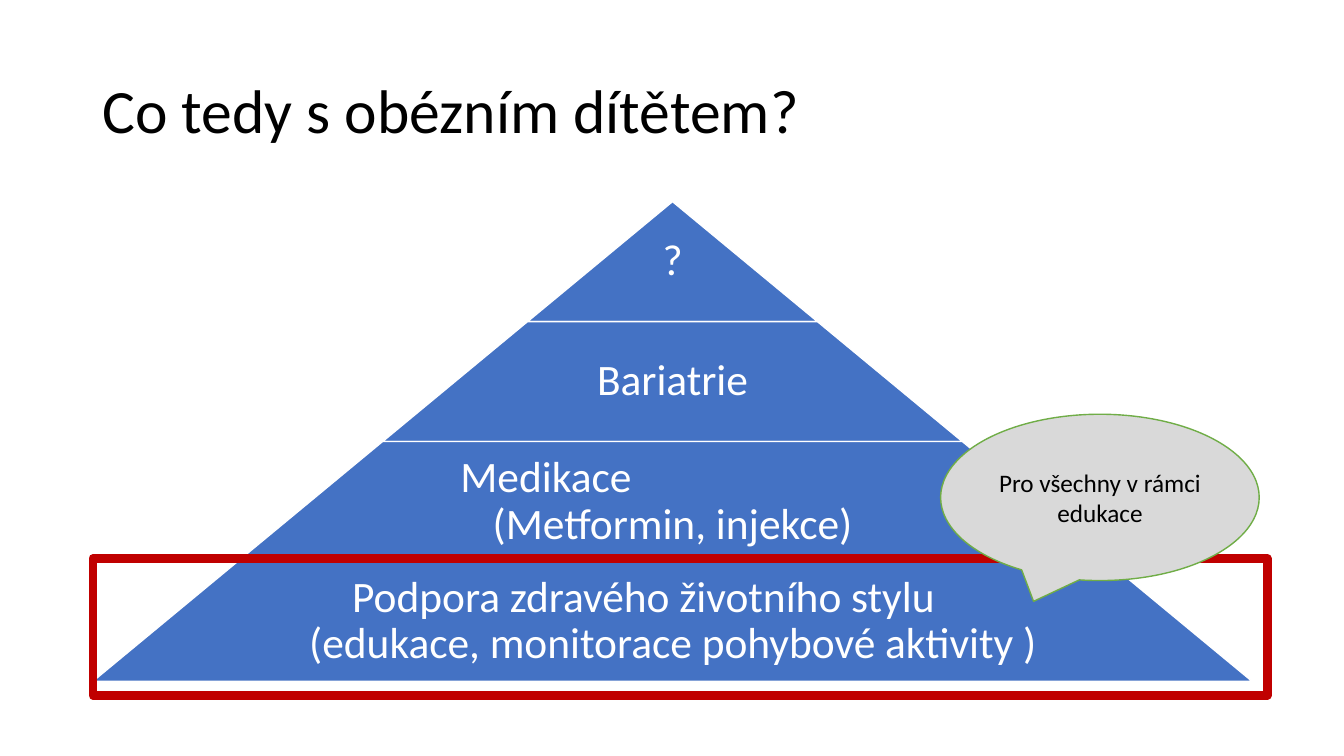
from pptx import Presentation
from pptx import util as u
from pptx.dml.color import RGBColor
from pptx.enum import shapes, text

INK = {"blue": "4472C4", "white": "FFFFFF", "black": "000000",
       "red": "C00000", "gray": "D9D9D9", "green": "70AD47"}
TIERS = [
    [("?", None)],
    [("Bariatrie", None)],
    [("Medikace", 0.66), ("(Metformin, injekce)", None)],
    [("Podpora zdravého životního stylu", 0.52),
     ("(edukace, monitorace pohybové aktivity )", None)],
]


def color(name):
    """Return the named colour."""
    return RGBColor.from_string(INK[name])


def inches(box):
    """Turn a box of numbers into lengths."""
    return [u.Inches(side) for side in box]


def shape(slide, kind, box, fill, line, width):
    """Add a flat preset shape."""
    form = slide.shapes.add_shape(kind, *inches(box))
    form.shadow.inherit = False
    if fill:
        form.fill.solid()
        form.fill.fore_color.rgb = color(fill)
    else:
        form.fill.background()
    form.line.color.rgb = color(line)
    form.line.width = u.Pt(width)
    return form


def write(form, lines, size, ink, align, inset=None, space=None):
    """Fill a frame with lines; an indented line is set to the left."""
    frame = form.text_frame
    frame.word_wrap = True
    frame.vertical_anchor = text.MSO_ANCHOR.MIDDLE
    if inset is not None:
        frame.margin_left = frame.margin_right = u.Inches(inset)
        frame.margin_top = frame.margin_bottom = u.Inches(inset)
    for i, (words, indent) in enumerate(lines):
        para = frame.paragraphs[0] if i == 0 else frame.add_paragraph()
        para.alignment = align
        if indent is not None:
            para.alignment = text.PP_ALIGN.LEFT
            para._p.get_or_add_pPr().set("marL", str(u.Inches(indent)))
        if space:
            para.line_spacing = space
        run = para.add_run()
        run.text = words
        run.font.size = u.Pt(size)
        run.font.name = "Calibri"
        run.font.color.rgb = color(ink)


def title(slide, box):
    """Place the slide heading."""
    form = slide.shapes.add_textbox(*inches(box))
    write(form, [("Co tedy s obézním dítětem?", None)], 44, "black",
          text.PP_ALIGN.LEFT, space=0.9)


def pyramid(slide, box):
    """Stack the tiers from the tip to the base."""
    left, top, width, height = box
    count = len(TIERS)
    high = height / count
    mid = left + width / 2
    for i, lines in enumerate(TIERS):
        wide = width * (i + 1) / count
        y = top + i * high
        band = shape(slide, shapes.MSO_SHAPE.TRAPEZOID,
                     (mid - wide / 2, y, wide, high), "blue", "white", 1)
        band.adjustments[0] = width / count / 2 / high
        span = wide if i == 0 else wide * 0.65
        label = slide.shapes.add_textbox(
            *inches((mid - span / 2, y, span, high)))
        write(label, lines, 31, "white", text.PP_ALIGN.CENTER, 0.04, 0.9)


def callout(slide, box):
    """Place the speech bubble."""
    form = shape(slide, shapes.MSO_SHAPE.OVAL_CALLOUT, box,
                 "gray", "green", 1)
    write(form, [("Pro všechny v rámci edukace", None)], 18, "black",
          text.PP_ALIGN.CENTER)


def main():
    """Build and save the slide."""
    deck = Presentation()
    deck.slide_width, deck.slide_height = inches((13.33, 7.5))
    slide = deck.slides.add_slide(deck.slide_layouts[6])
    title(slide, (0.92, 0.4, 11.5, 1.45))
    pyramid(slide, (0.92, 2, 11.5, 4.76))
    shape(slide, shapes.MSO_SHAPE.RECTANGLE, (0.92, 5.54, 11.65, 1.36),
          None, "red", 6)
    callout(slide, (9.33, 4.11, 3.16, 1.65))
    deck.save("out.pptx")


if __name__ == "__main__":
    main()
